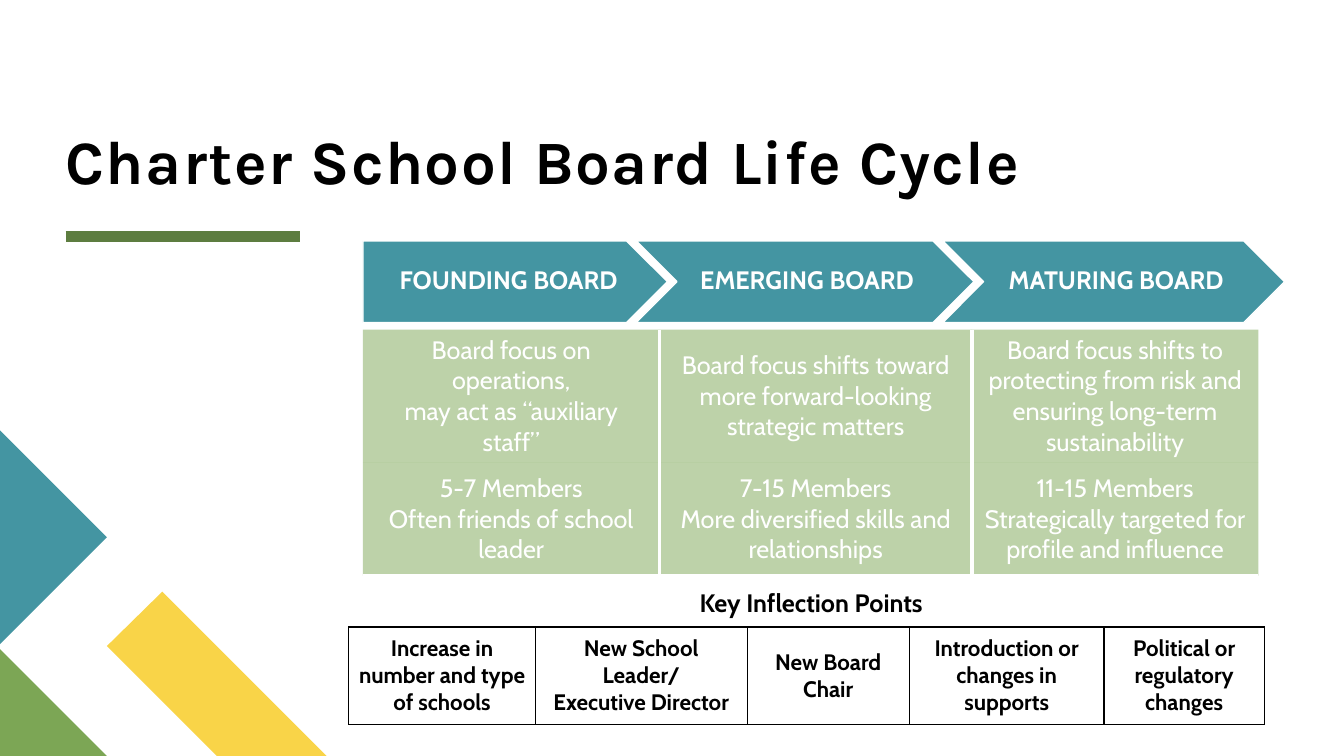
from lxml import etree
from pptx import Presentation
from pptx.dml.color import RGBColor
from pptx.enum.shapes import MSO_CONNECTOR, MSO_SHAPE
from pptx.enum.text import MSO_ANCHOR, MSO_AUTO_SIZE, PP_ALIGN
from pptx.oxml.ns import qn
from pptx.util import Inches, Pt

STRAIGHT = MSO_CONNECTOR.STRAIGHT
PENTAGON, CHEVRON = MSO_SHAPE.PENTAGON, MSO_SHAPE.CHEVRON
MIDDLE, BOTTOM = MSO_ANCHOR.MIDDLE, MSO_ANCHOR.BOTTOM
LEFT, CENTER = PP_ALIGN.LEFT, PP_ALIGN.CENTER
NO_AUTOFIT = MSO_AUTO_SIZE.NONE
COLORS = {"teal": "4495A2", "green": "7CA655", "yellow": "F9D448",
          "rule": "5D7D40", "white": "FFFFFF", "black": "000000"}

ACCENTS = [
    ("yellow", [(3.24, 7.5), (2.15, 7.5), (1.06, 6.41), (1.61, 5.87)]),
    ("green", [(1.06, 7.5), (0, 7.5), (0, 6.44)]),
    ("teal", [(0, 4.27), (1.06, 5.33), (0, 6.39)]),
]
STAGES = [
    ("FOUNDING BOARD", PENTAGON, 0, 3.02, 0, 2.82),
    ("EMERGING BOARD", CHEVRON, 2.71, 3.35, 3.11, 2.54),
    ("MATURING BOARD", CHEVRON, 5.75, 3.39, 6.16, 2.57),
]
TRAITS = [
    ["Board focus on operations,\nmay act as “auxiliary\nstaff”",
     "Board focus shifts toward\nmore forward-looking\nstrategic matters",
     "Board focus shifts to\nprotecting from risk and\nensuring long-term\nsustainability"],
    ["5-7 Members\nOften friends of school leader",
     "7-15 Members\nMore diversified skills and\nrelationships",
     "11-15 Members\nStrategically targeted for\nprofile and influence"],
]
INFLECTIONS = [["Increase in number and type of schools",
                "New School Leader/\nExecutive Director",
                "New Board Chair",
                "Introduction or changes in supports",
                "Political or regulatory changes"]]


def rgb(name):
    """Return the named colour."""
    return RGBColor.from_string(COLORS[name])


def format_text(tf, size, color, bold=False, font="Cabin", align=CENTER, spacing=None):
    """Format every paragraph and run of a text frame."""
    for p in tf.paragraphs:
        p.alignment = align
        p.line_spacing = spacing
        for r in p.runs:
            r.font.name, r.font.size, r.font.bold = font, Pt(size), bold
            r.font.color.rgb = rgb(color)


def add_label(slide, box, text, size, color, spacing=None, anchor=None):
    """Add a bold centred text box."""
    tf = slide.shapes.add_textbox(*map(Inches, box)).text_frame
    tf.word_wrap = True
    tf.vertical_anchor = anchor
    tf.text = text
    format_text(tf, size, color, bold=True, spacing=spacing)
    return tf


def add_title(slide, box):
    """Place the title and the short rule below it."""
    left, top, width, height = box
    title = slide.shapes.title
    title.left, title.top, title.width, title.height = map(Inches, box)
    tf = title.text_frame
    tf.text = "Charter School Board Life Cycle"
    tf.auto_size, tf.vertical_anchor = NO_AUTOFIT, BOTTOM
    tf.margin_left = tf.margin_right = tf.margin_top = tf.margin_bottom = 0
    format_text(tf, 44, "black", True, "Karla", LEFT, 0.8)
    tf.paragraphs[0].runs[0].font._element.set("spc", "100")
    y = Inches(top + height + 0.4)
    rule = slide.shapes.add_connector(STRAIGHT, Inches(left), y, Inches(left + 2.33), y)
    rule.line.color.rgb = rgb("rule")
    rule.line.width = Pt(8)
    etree.SubElement(rule._element.spPr, qn("a:effectLst"))


def add_accents(slide):
    """Draw the coloured corner shapes."""
    for color, points in ACCENTS:
        points = [(Inches(x), Inches(y)) for x, y in points]
        builder = slide.shapes.build_freeform(*points[0])
        builder.add_line_segments(points[1:], close=True)
        sp = builder.convert_to_shape()
        sp.shadow.inherit = False
        sp.fill.solid()
        sp.fill.fore_color.rgb = rgb(color)
        sp.line.fill.background()


def add_stages(slide, left, top, height):
    """Draw the row of stage arrows with their labels."""
    for text, kind, x, width, text_x, text_width in STAGES:
        sp = slide.shapes.add_shape(
            kind, *map(Inches, (left + x, top, width, height)))
        sp.shadow.inherit = False
        sp.fill.solid()
        sp.fill.fore_color.rgb = rgb("teal")
        sp.line.color.rgb = rgb("white")
        sp.line.width = Pt(1)
        tf = add_label(slide, (left + text_x, top, text_width, height),
                       text, 18, "white", 0.9, MIDDLE)
        tf.margin_left = Inches(0.1 if kind == PENTAGON else 0.08)
        tf.margin_right = Inches(0.03)


def set_borders(cell, color, width, sides):
    """Draw the given cell sides and clear the others."""
    tc_pr = cell._tc.get_or_add_tcPr()
    for side in "LRTB":
        ln = etree.SubElement(tc_pr, qn(f"a:ln{side}"), w=str(Pt(width)))
        if side in sides:
            fill = etree.SubElement(ln, qn("a:solidFill"))
            etree.SubElement(fill, qn("a:srgbClr"), val=COLORS[color])
        else:
            etree.SubElement(ln, qn("a:noFill"))


def add_grid(slide, left, top, widths, heights, rows):
    """Add a plain table with centred text and yield its cells by position."""
    table = slide.shapes.add_table(
        len(heights), len(widths), Inches(left), Inches(top),
        Inches(sum(widths)), Inches(sum(heights))).table
    table.first_row = table.horz_banding = False
    for column, width in zip(table.columns, widths):
        column.width = Inches(width)
    for row, height in zip(table.rows, heights):
        row.height = Inches(height)
    for i, texts in enumerate(rows):
        for j, text in enumerate(texts):
            cell = table.cell(i, j)
            cell.text_frame.text = text
            cell.vertical_anchor = MIDDLE
            yield i, j, cell


def add_traits(slide, left, top):
    """Add the green table that describes each stage."""
    widths, heights = [2.94, 3.1, 2.84], [1.3, 1.12]
    for i, j, cell in add_grid(slide, left, top, widths, heights, TRAITS):
        format_text(cell.text_frame, 18, "white")
        sides = ("L" if j else "") + ("R" if j < 2 else "") + ("B" if i else "")
        set_borders(cell, "white", 3, sides)
        cell.fill.solid()
        cell.fill.fore_color.rgb = rgb("green")
        color = cell._tc.tcPr.find(f"{qn('a:solidFill')}/{qn('a:srgbClr')}")
        etree.SubElement(color, qn("a:alpha"), val="50000")


def add_inflections(slide, left, top):
    """Add the outlined table of inflection points and its heading."""
    add_label(slide, (left + 3.16, top - 0.44, 2.85, 0.5),
              "Key Inflection Points", 18, "black")
    widths = [1.85, 2.1, 1.61, 1.93, 1.59]
    for _, _, cell in add_grid(slide, left, top, widths, [0.97], INFLECTIONS):
        format_text(cell.text_frame, 16, "black", bold=True)
        set_borders(cell, "black", 1, "LRTB")
        cell.fill.background()


def main():
    """Build and save the slide."""
    prs = Presentation()
    prs.slide_width, prs.slide_height = Inches(13.33), Inches(7.5)
    slide = prs.slides.add_slide(prs.slide_layouts[5])
    add_title(slide, (0.65, 0.11, 11.89, 1.84))
    add_accents(slide)
    add_traits(slide, 3.6, 3.27)
    add_stages(slide, 3.6, 2.39, 0.81)
    add_inflections(slide, 3.46, 6.22)
    prs.save("out.pptx")


if __name__ == "__main__":
    main()
